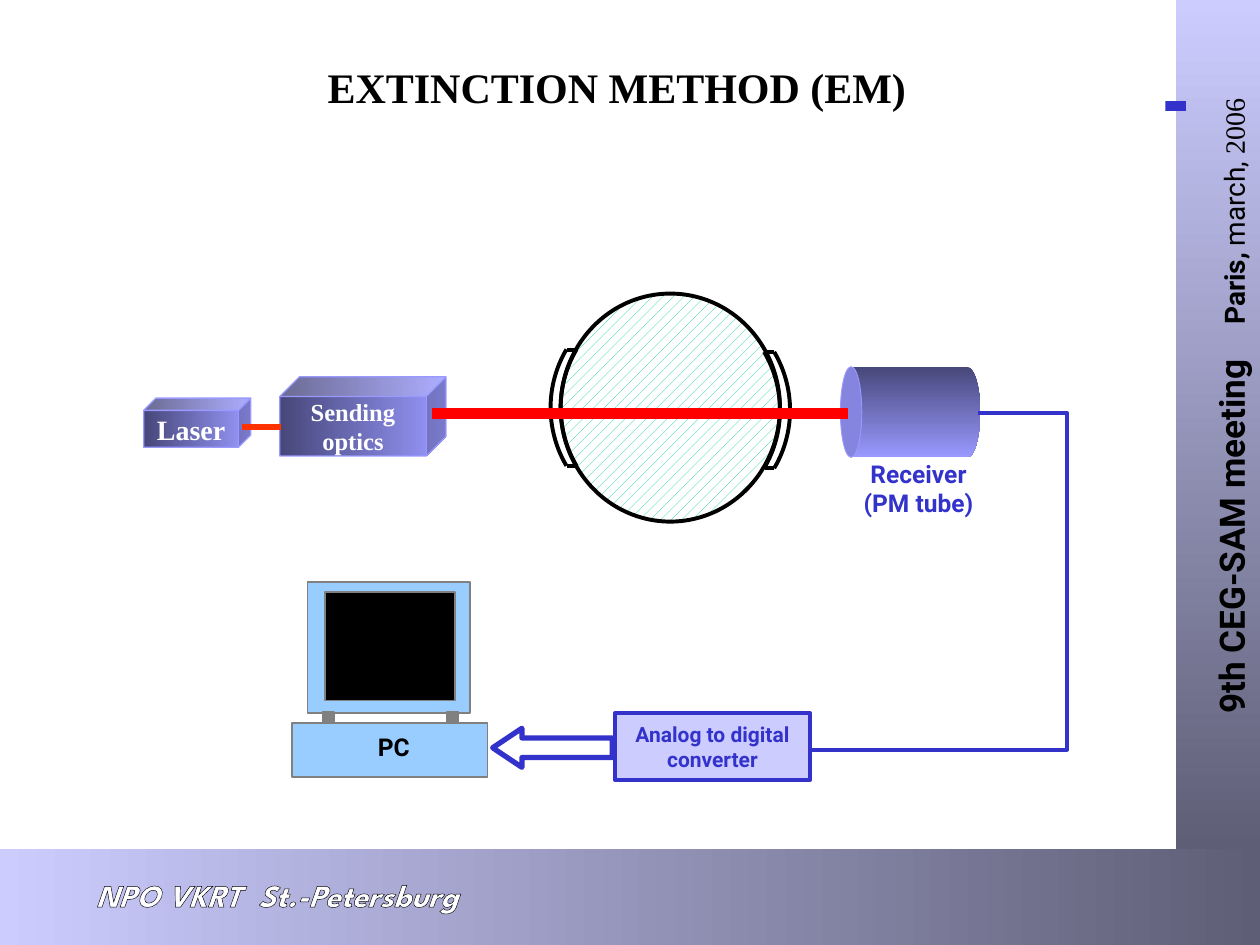
import pptx
import pptx.dml.color
import pptx.enum.dml
import pptx.enum.shapes
import pptx.enum.text
import pptx.oxml
import pptx.oxml.ns
import pptx.util
from pptx.util import Inches

RGBColor = pptx.dml.color.RGBColor
SHAPE = pptx.enum.shapes.MSO_SHAPE
ALIGN = pptx.enum.text.PP_ALIGN
ANCHOR = pptx.enum.text.MSO_ANCHOR

WHITE = RGBColor(0xFF, 0xFF, 0xFF)
BLACK = RGBColor(0, 0, 0)
GRAY = RGBColor(0x80, 0x80, 0x80)
LAVENDER = RGBColor(0xCC, 0xCC, 0xFF)
SLATE = RGBColor(0x5E, 0x5E, 0x76)
PERIWINKLE = RGBColor(0x99, 0x99, 0xFF)
LENS = RGBColor(0x85, 0x85, 0xE0)
INDIGO = RGBColor(0x47, 0x47, 0x7A)
BLUE = RGBColor(0x33, 0x33, 0xCC)
SKY = RGBColor(0x99, 0xCC, 0xFF)
TEAL = RGBColor(0, 0xCC, 0x99)
RED = RGBColor(0xFF, 0, 0)
ORANGE = RGBColor(0xFF, 0x33, 0)

SERIF, SANS, DISPLAY = "Times New Roman", "Roboto", "League Spartan"
RIGHTWARD, DOWNWARD = 0, 270


def add_shape(slide, kind, box, fill=None, line=None, width=1):
    """Add a preset shape; a missing fill or line colour means none is drawn."""
    shape = slide.shapes.add_shape(kind, *map(Inches, box))
    shape.shadow.inherit = False
    if fill is None:
        shape.fill.background()
    else:
        shape.fill.solid()
        shape.fill.fore_color.rgb = fill
    set_line(shape, line, width)
    return shape


def set_line(shape, color, width):
    if color is None:
        shape.line.fill.background()
    else:
        shape.line.color.rgb = color
        shape.line.width = pptx.util.Pt(width)


def set_gradient(shape, start, end, angle):
    shape.fill.gradient()
    shape.fill.gradient_angle = angle
    for stop, color in zip(shape.fill.gradient_stops, (start, end)):
        stop.color.rgb = color


def add_line(slide, start, end, color, width):
    connector = slide.shapes.add_connector(
        pptx.enum.shapes.MSO_CONNECTOR.STRAIGHT, *map(Inches, start + end))
    set_line(connector, color, width)
    connector._element.spPr.append(pptx.oxml.parse_xml(
        f"<a:effectLst {pptx.oxml.ns.nsdecls('a')}/>"))


def write(shape, lines, size, font, color, wrap=False, anchor=ANCHOR.MIDDLE):
    """Fill a shape with bold, centred lines and return the first paragraph."""
    frame = shape.text_frame
    frame.word_wrap = wrap
    frame.vertical_anchor = anchor
    for index, line in enumerate(lines):
        paragraph = frame.add_paragraph() if index else frame.paragraphs[0]
        paragraph.text = line
        paragraph.alignment = ALIGN.CENTER
        paragraph.font.size = pptx.util.Pt(size)
        paragraph.font.name = font
        paragraph.font.bold = True
        paragraph.font.color.rgb = color
    return frame.paragraphs[0]


def add_label(slide, box, lines, size, font, color, **options):
    label = slide.shapes.add_textbox(*map(Inches, box))
    return label, write(label, lines, size, font, color, **options)


def add_footer(slide, box):
    left, top, _, _ = box
    set_gradient(add_shape(slide, SHAPE.RECTANGLE, box), LAVENDER, SLATE, RIGHTWARD)
    _, paragraph = add_label(slide, (left + 0.2, top + 0.16, 4, 0.42), [""],
                             18, DISPLAY, WHITE, wrap=True, anchor=ANCHOR.TOP)
    paragraph.font.italic = True
    for text, spacing in (("NPO VKRT", 0), (" ", 500), ("St.-Petersburg", 0)):
        run = paragraph.add_run()
        run.text = text
        run.font.size = pptx.util.Pt(18)
        properties = run.font._element
        properties.set("spc", str(spacing))
        properties.insert(0, pptx.oxml.parse_xml(
            f'<a:ln {pptx.oxml.ns.nsdecls("a")} w="9525"><a:solidFill>'
            f'<a:srgbClr val="{BLACK}"/></a:solidFill></a:ln>'))


def add_side_banner(slide, box):
    left, top, _, _ = box
    set_gradient(add_shape(slide, SHAPE.RECTANGLE, box), LAVENDER, SLATE, DOWNWARD)
    label, paragraph = add_label(slide, (left - 2.6, top + 2.84, 5.74, 0.77), [""],
                                 20, SANS, BLACK, wrap=True, anchor=ANCHOR.BOTTOM)
    label.rotation = 270
    for text, size, font, bold, spacing in (
            ("9th CEG-SAM meeting", 20, SANS, True, 0),
            (" ", 20, SANS, True, 1500),
            ("Paris, ", 16, SANS, True, 0),
            ("march, ", 16, SANS, False, 0),
            ("2006", 16, SERIF, False, 0)):
        run = paragraph.add_run()
        run.text = text
        run.font.size = pptx.util.Pt(size)
        run.font.name = font
        run.font.bold = bold
        run.font._element.set("spc", str(spacing))


def add_title(slide, box):
    left, top, _, _ = box
    add_line(slide, (left + 0.15, top + 0.4), (left + 8.66, top + 0.4), BLUE, 6)
    title = add_shape(slide, SHAPE.RECTANGLE, box, WHITE)
    paragraph = write(title, ["EXTINCTION METHOD (EM)"], 24, SERIF, BLACK,
                      wrap=True, anchor=ANCHOR.TOP)
    paragraph.alignment = ALIGN.LEFT
    title.text_frame.margin_left = Inches(1.85)


def add_chamber(slide, box):
    """Round measuring chamber with a curved window on either side."""
    left, top, width, height = box
    circle = add_shape(slide, SHAPE.OVAL, box, WHITE, BLACK, 2.25)
    circle.fill.patterned()
    circle.fill.pattern = pptx.enum.dml.MSO_PATTERN.PERCENT_20
    circle.fill.fore_color.rgb = TEAL
    circle.fill.back_color.rgb = WHITE
    diameter, thickness, half_angle = 1.82, 0.08, 30.5
    middle = top + height / 2
    for edge, center, y in ((left, 180, middle), (left + width, 0, middle + 0.02)):
        outward = -thickness if center else thickness
        for rim in (edge, edge + outward):
            arc_left = rim if center else rim - diameter
            arc = add_shape(slide, SHAPE.ARC, (arc_left, y - diameter / 2, diameter, diameter),
                            None, BLACK, 2.25)
            for index, angle in enumerate((center - half_angle, center + half_angle)):
                arc.adjustments[index] = angle % 360 * 0.6
        inner = edge + (0.12 if center else -0.12)
        for offset in (-0.46, 0.46):
            add_line(slide, (inner, y + offset), (inner + outward * 0.9, y + offset), BLACK, 2.25)


def add_cube(slide, box, lines, size):
    cube = add_shape(slide, SHAPE.CUBE, box, PERIWINKLE, PERIWINKLE, 0.75)
    set_gradient(cube, INDIGO, PERIWINKLE, RIGHTWARD)
    write(cube, lines, size, SERIF, WHITE)


def add_receiver(slide, box):
    """Cylinder lying on its side, with its caption below."""
    left, top, width, height = box
    cap = 0.17
    for kind, x, part_width in ((SHAPE.OVAL, left + width - cap - 0.04, cap + 0.04),
                                (SHAPE.RECTANGLE, left + cap / 2, width - cap - 0.02)):
        part = add_shape(slide, kind, (x, top, part_width, height), PERIWINKLE)
        set_gradient(part, INDIGO, PERIWINKLE, DOWNWARD)
    add_shape(slide, SHAPE.OVAL, (left, top, cap, height), LENS, PERIWINKLE, 0.5)
    add_label(slide, (left + 0.08, top + 0.68, 1.08, 0.57),
              ["Receiver", "(PM tube)"], 14, SANS, BLUE)


def add_computer(slide, box):
    left, top, width, _ = box
    for x, y, part_width, part_height, fill in (
            (0, 1.12, width, 0.43, SKY), (0.12, 0, 1.29, 1.04, SKY),
            (0.26, 0.08, 1.03, 0.86, BLACK),
            (0.24, 1.03, 0.09, 0.09, GRAY), (1.23, 1.03, 0.09, 0.09, GRAY)):
        add_shape(slide, SHAPE.RECTANGLE, (left + x, top + y, part_width, part_height), fill, GRAY)
    add_label(slide, (left + 0.57, top + 1.14, 0.47, 0.33), ["PC"], 14, SANS, BLACK)


def add_converter(slide, box):
    left, top, _, _ = box
    converter = add_shape(slide, SHAPE.RECTANGLE, box, LAVENDER, BLUE, 2.25)
    write(converter, ["Analog to digital", "converter"], 12, SANS, BLUE)
    arrow = add_shape(slide, SHAPE.LEFT_ARROW, (left - 0.97, top + 0.12, 0.95, 0.31), WHITE, BLUE, 3)
    arrow.adjustments[1] = 0.75


def add_cable(slide, box):
    """Line from the receiver around to the converter."""
    left, top, width, height = box
    right, bottom = left + width, top + height
    builder = slide.shapes.build_freeform(Inches(7.76), Inches(top))
    builder.add_line_segments([(Inches(x), Inches(y)) for x, y in
                               ((right, top), (right, bottom), (left, bottom))], close=False)
    cable = builder.convert_to_shape()
    cable.shadow.inherit = False
    cable.fill.background()
    set_line(cable, BLUE, 2.25)


def main():
    presentation = pptx.Presentation()
    presentation.slide_width, presentation.slide_height = Inches(10), Inches(7.5)
    slide = presentation.slides.add_slide(presentation.slide_layouts[6])
    add_footer(slide, (0, 6.74, 10, 0.76))
    add_side_banner(slide, (9.33, 0, 0.67, 6.74))
    add_title(slide, (0.75, 0.44, 8.5, 0.95))
    add_chamber(slide, (4.45, 2.33, 1.74, 1.81))
    add_converter(slide, (4.88, 5.66, 1.55, 0.53))
    add_cube(slide, (2.22, 2.99, 1.32, 0.63), ["Sending", "optics"], 14)
    add_cube(slide, (1.14, 3.16, 0.85, 0.39), ["Laser"], 16)
    add_line(slide, (1.92, 3.39), (2.23, 3.39), ORANGE, 3)
    add_computer(slide, (2.32, 4.62, 1.55, 1.55))
    add_receiver(slide, (6.67, 2.91, 1.11, 0.72))
    add_line(slide, (3.43, 3.28), (6.73, 3.28), RED, 6)
    add_cable(slide, (6.43, 3.28, 2.04, 2.67))
    presentation.save("out.pptx")


if __name__ == "__main__":
    main()
